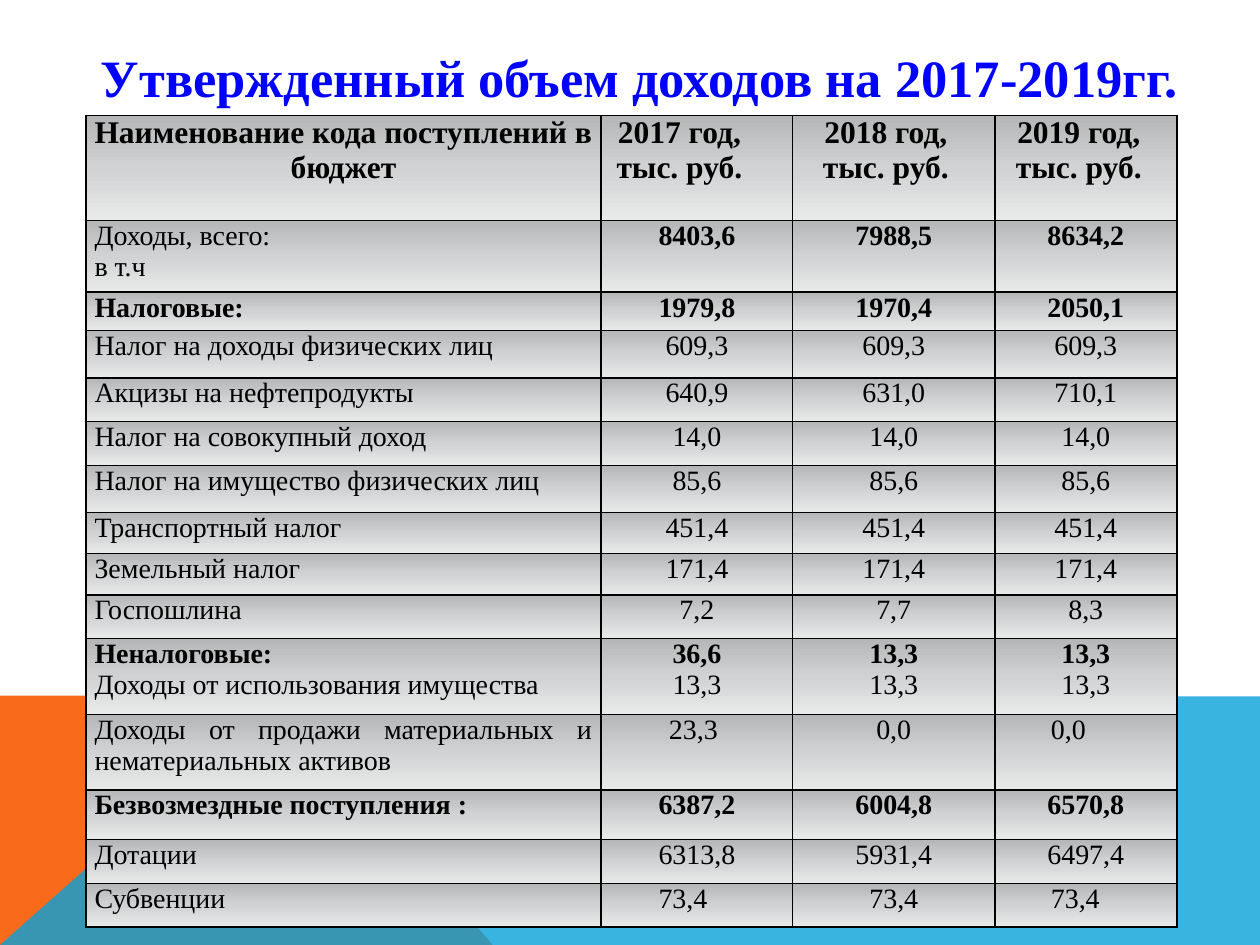
from lxml import etree
from pptx import Presentation
from pptx.dml.color import RGBColor
from pptx.enum import text
from pptx.oxml import ns
from pptx.util import Pt

TITLE = "Утвержденный объем доходов на 2017-2019гг."
HEAD = ("Наименование кода поступлений в бюджет",
        "2017 год, тыс. руб.", "2018 год, тыс. руб.", "2019 год, тыс. руб.")
# Each row: height, bold flag of each line (label, values), then the cells.
ROWS = [
    (60, (True, True), HEAD),
    (41, (False, True), ("Доходы, всего:\nв т.ч", "8403,6", "7988,5", "8634,2")),
    (22, (True, True), ("Налоговые:", "1979,8", "1970,4", "2050,1")),
    (27, (False, False), ("Налог на доходы физических лиц", "609,3", "609,3", "609,3")),
    (25, (False, False), ("Акцизы на нефтепродукты", "640,9", "631,0", "710,1")),
    (25, (False, False), ("Налог на совокупный доход", "14,0", "14,0", "14,0")),
    (27, (False, False), ("Налог на имущество физических лиц", "85,6", "85,6", "85,6")),
    (23.5, (False, False), ("Транспортный налог", "451,4", "451,4", "451,4")),
    (23.5, (False, False), ("Земельный налог", "171,4", "171,4", "171,4")),
    (25, (False, False), ("Госпошлина", "7,2", "7,7", "8,3")),
    (43.5, (True, True), ("Неналоговые:\nДоходы от использования имущества",
                          "36,6\n13,3", "13,3\n13,3", "13,3\n13,3")),
    (43, (False, False), ("Доходы от продажи материальных и нематериальных активов",
                          "23,3", "0,0", "0,0")),
    (28.5, (True, True), ("Безвозмездные поступления :", "6387,2", "6004,8", "6570,8")),
    (25, (False, False), ("Дотации", "6313,8", "5931,4", "6497,4")),
    (25, (False, False), ("Субвенции", "73,4", "73,4", "73,4")),
]
WIDTHS = (294.5, 109.5, 115.5, 104)
SHIFTS = {(0, 1): 20, (0, 2): 9, (0, 3): 8, (11, 1): 4,
          (11, 3): 20, (14, 1): 16, (14, 3): 12}
HEX = {"title": "0000FF", "ink": "000000", "orange": "F96A1B", "blue": "08A1D9"}
SHADE = ((0, "B5B6B8"), (50, "D1D2D3"), (100, "E8E9E9"))
BANDS = [
    ("orange", 100, ((0, 540), (0, 397.5), (160.5, 397.5), (281.5, 540))),
    ("blue", 80, ((0, 540), (160.5, 397.5), (720, 398), (720, 540))),
]
FACE = "Times New Roman"


def node(up, tag, **attrs):
    """Append a drawing element."""
    return etree.SubElement(up, ns.qn("a:" + tag), attrs)


def style(par, size, color, bold, align):
    """Format a whole paragraph."""
    font = par.font
    font.name, font.size, font.bold = FACE, Pt(size), bold
    font.color.rgb = RGBColor.from_string(HEX[color])
    par.alignment = align


def band(slide, color, alpha, points):
    """Draw one flat background band."""
    pen = slide.shapes.build_freeform(*map(Pt, points[0]))
    pen.add_line_segments([(Pt(x), Pt(y)) for x, y in points[1:]], close=True)
    shape = pen.convert_to_shape()
    shape.shadow.inherit = False
    shape.line.fill.background()
    shape.fill.solid()
    shape.fill.fore_color.rgb = RGBColor.from_string(HEX[color])
    if alpha < 100:
        tint = shape.element.spPr.find(".//" + ns.qn("a:srgbClr"))
        node(tint, "alpha", val=str(alpha * 1000))


def paint(cell):
    """Give a cell black borders and a vertical gradient."""
    props = cell._tc.get_or_add_tcPr()
    for side in ("lnL", "lnR", "lnT", "lnB"):
        line = node(props, side, w=str(Pt(1)))
        node(node(line, "solidFill"), "srgbClr", val=HEX["ink"])
    grad = node(props, "gradFill", rotWithShape="1")
    stops = node(grad, "gsLst")
    for pos, tone in SHADE:
        node(node(stops, "gs", pos=str(pos * 1000)), "srgbClr", val=tone)
    node(grad, "lin", ang="5400000", scaled="0")


def write(cell, words, row, col, bold):
    """Fill and format one cell."""
    cell.margin_left, cell.margin_right = Pt(5), Pt(5 + SHIFTS.get((row, col), 0))
    cell.margin_top = cell.margin_bottom = 0
    cell.text = words
    label = row and not col
    align = text.PP_ALIGN.JUSTIFY if label else text.PP_ALIGN.CENTER
    for i, par in enumerate(cell.text_frame.paragraphs):
        heavy = bold and i == 0
        style(par, 16 if row else 18, "ink", heavy, align)
    paint(cell)


def main():
    """Build the budget income slide."""
    deck = Presentation()
    deck.slide_width, deck.slide_height = Pt(720), Pt(540)
    slide = deck.slides.add_slide(deck.slide_layouts[5])
    for item in BANDS:
        band(slide, *item)

    title = slide.shapes.title
    title.left, title.top, title.width, title.height = map(Pt, (48, 21, 635, 45))
    frame = title.text_frame
    frame.text, frame.word_wrap = TITLE, True
    frame.auto_size = text.MSO_AUTO_SIZE.NONE
    frame.vertical_anchor = text.MSO_ANCHOR.MIDDLE
    style(frame.paragraphs[0], 30, "title", True, text.PP_ALIGN.CENTER)

    tall = sum(row[0] for row in ROWS)
    grid = slide.shapes.add_table(len(ROWS), len(WIDTHS), Pt(49), Pt(66),
                                  Pt(sum(WIDTHS)), Pt(tall)).table
    grid.first_row = grid.horz_banding = False
    for col, width in zip(grid.columns, WIDTHS):
        col.width = Pt(width)
    for r, (height, bolds, cells) in enumerate(ROWS):
        grid.rows[r].height = Pt(height)
        for c, words in enumerate(cells):
            write(grid.cell(r, c), words, r, c, bolds[c > 0])
    deck.save("out.pptx")


if __name__ == "__main__":
    main()
